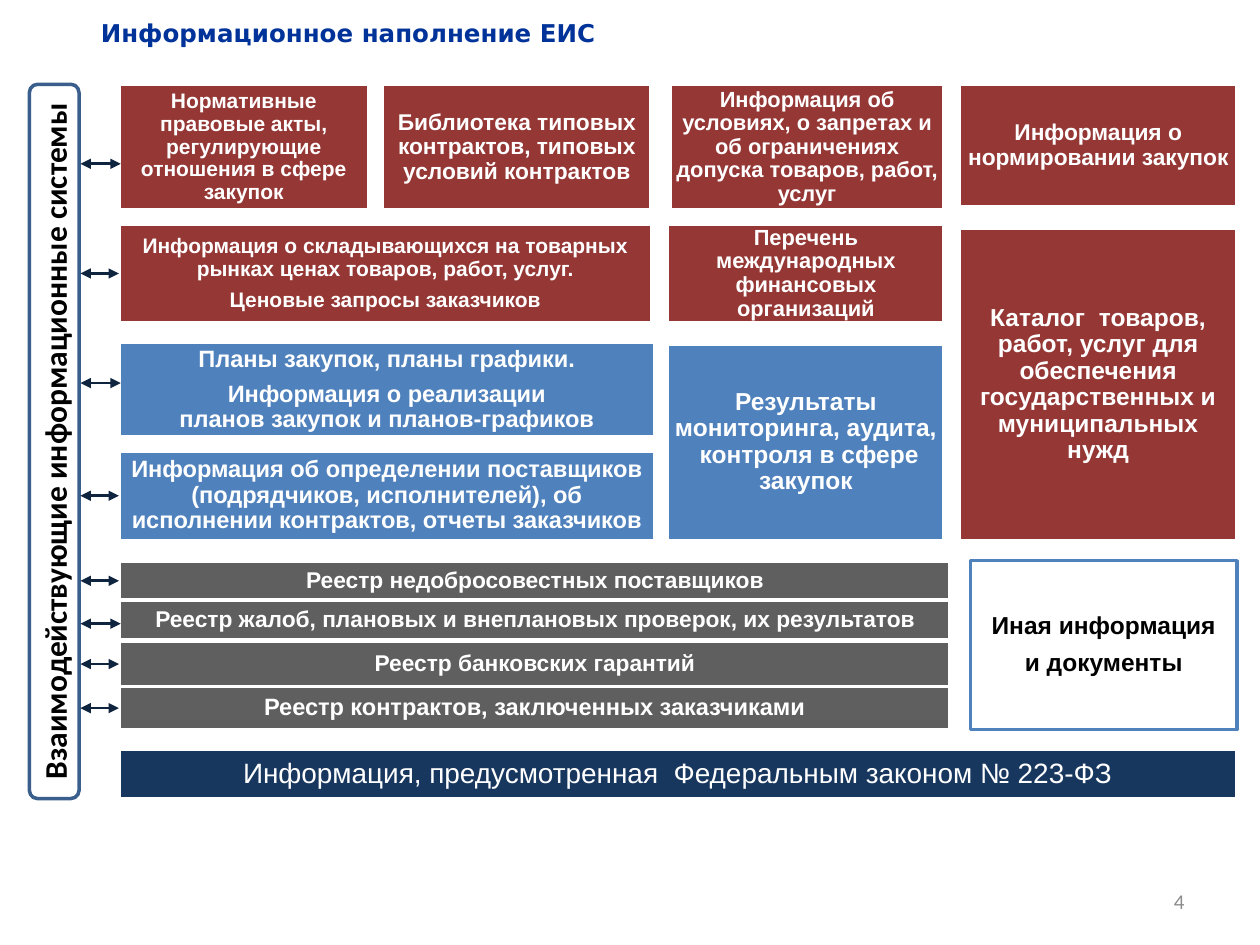
import pptx
import pptx.util
import pptx.dml.color
import pptx.enum.shapes
import pptx.enum.text
import pptx.oxml.ns
from lxml import etree

Pt = pptx.util.Pt
RGB = pptx.dml.color.RGBColor
SHAPE = pptx.enum.shapes.MSO_SHAPE
ALIGN = pptx.enum.text.PP_ALIGN
ANCHOR = pptx.enum.text.MSO_ANCHOR
qn = pptx.oxml.ns.qn

WHITE = RGB(0xFF, 0xFF, 0xFF)
BLACK = RGB(0, 0, 0)
RED = RGB(0x95, 0x37, 0x35)
BLUE = RGB(0x4F, 0x81, 0xBD)
GRAY = RGB(0x5F, 0x5F, 0x5F)
NAVY = RGB(0x17, 0x37, 0x5E)
TITLE_BLUE = RGB(0x00, 0x33, 0x99)
FRAME_BLUE = RGB(0x3A, 0x5F, 0x8C)
ARROW_NAVY = RGB(0x0F, 0x24, 0x3E)
PAGE_GRAY = RGB(0x8C, 0x8C, 0x8C)

# Column edges and widths
LEFT = 68
COL3, COL4, COL_W = 381.4, 548.4, 158.2
PAIR_W, REGISTER_W = 306, 475

# left, top, width, height, fill, size, paragraphs
TOPICS = [
    (LEFT, 48.2, 142.6, 72, RED, 12,
     ["Нормативные правовые акты, регулирующие отношения в сфере закупок"]),
    (218.5, 48.2, 153.5, 72, RED, 13,
     ["Библиотека типовых контрактов, типовых условий контрактов"]),
    (382.8, 48.2, 156.8, 72, RED, 12.5,
     ["Информация об условиях, о запретах и об ограничениях допуска товаров, работ, услуг"]),
    (COL4, 48.2, COL_W, 70, RED, 13, ["Информация о нормировании закупок"]),
    (COL3, 128.2, COL_W, 56.2, RED, 12.5,
     ["Перечень международных финансовых организаций"]),
    (COL4, 130.4, COL_W, 178.5, RED, 14,
     ["Каталог  товаров, работ, услуг для обеспечения государственных и муниципальных нужд"]),
    (COL3, 196.6, COL_W, 112.3, BLUE, 14,
     ["Результаты мониторинга, аудита,  контроля в сфере закупок"]),
]

# The same fields, for blocks that exchange data with the side systems
EXCHANGE = [
    (LEFT, 128.2, 304.4, 56.2, RED, 12,
     ["Информация о складывающихся на товарных рынках ценах товаров, работ, услуг.",
      "Ценовые запросы заказчиков"]),
    (LEFT, 195.8, PAIR_W, 54, BLUE, 13.5,
     ["Планы закупок, планы графики.",
      "Информация о реализации\nпланов закупок и планов-графиков"]),
    (LEFT, 257.8, PAIR_W, 51, BLUE, 13.5,
     ["Информация об определении поставщиков (подрядчиков, исполнителей), "
      "об исполнении контрактов, отчеты заказчиков"]),
    (LEFT, 320.8, REGISTER_W, 22.2, GRAY, 13, ["Реестр недобросовестных поставщиков"]),
    (LEFT, 343, REGISTER_W, 22.5, GRAY, 13,
     ["Реестр жалоб, плановых и внеплановых проверок, их результатов"]),
    (LEFT, 366.5, REGISTER_W, 25.9, GRAY, 13, ["Реестр банковских гарантий"]),
    (LEFT, 392.4, REGISTER_W, 24.5, GRAY, 13.5,
     ["Реестр контрактов, заключенных заказчиками"]),
]
# Arrow height for each exchange block; None means the middle of its side
ARROW_Y = [None, 218.9, None, None, 356.4, None, None]


def add_text(p, text, size, color, bold=False, font="Arial"):
    for i, line in enumerate(text.split("\n")):
        if i:
            p.add_line_break()
        r = p.add_run()
        r.text = line
        r.font.name, r.font.size, r.font.bold = font, Pt(size), bold
        r.font.color.rgb = color


def set_insets(tf, left, top, right, bottom):
    tf.margin_left, tf.margin_top = Pt(left), Pt(top)
    tf.margin_right, tf.margin_bottom = Pt(right), Pt(bottom)


def add_box(s, kind, left, top, width, height, fill, line):
    sp = s.shapes.add_shape(kind, Pt(left), Pt(top), Pt(width), Pt(height))
    sp.shadow.inherit = False
    sp.fill.solid()
    sp.fill.fore_color.rgb = fill
    sp.line.color.rgb = line
    sp.line.width = Pt(2)
    sp.text_frame.word_wrap = True
    sp.text_frame.vertical_anchor = ANCHOR.MIDDLE
    return sp


def add_block(s, left, top, width, height, fill, size, paragraphs,
              line=WHITE, color=WHITE, bold=True):
    sp = add_box(s, SHAPE.RECTANGLE, left, top, width, height, fill, line)
    tf = sp.text_frame
    set_insets(tf, 3.6, 3.6, 3.6, 3.6)
    for i, text in enumerate(paragraphs):
        p = tf.add_paragraph() if i else tf.paragraphs[0]
        p.alignment = ALIGN.CENTER
        p.line_spacing = 0.9
        if i:
            p.space_before = Pt(round(0.4 * size, 1))
        add_text(p, text, size, color, bold)
    return sp


def add_label(s, left, top, width, height, text, size, color, font, bold=False):
    sp = s.shapes.add_textbox(Pt(left), Pt(top), Pt(width), Pt(height))
    tf = sp.text_frame
    tf.word_wrap = True
    add_text(tf.paragraphs[0], text, size, color, bold, font)
    return tf


def add_arrow(s, y, block=None):
    c = s.shapes.add_connector(pptx.enum.shapes.MSO_CONNECTOR.STRAIGHT,
                               Pt(46), Pt(y), Pt(69), Pt(y))
    if block is not None:
        c.end_connect(block, 1)
    c.line.color.rgb = ARROW_NAVY
    c.line.width = Pt(1.5)
    ln = c.line._get_or_add_ln()
    for end in ("a:headEnd", "a:tailEnd"):
        etree.SubElement(ln, qn(end)).set("type", "triangle")
    etree.SubElement(c._element.spPr, qn("a:effectLst"))


def add_side_systems(s):
    sp = add_box(s, SHAPE.ROUNDED_RECTANGLE, 16.8, 48.2, 28.4, 408.2, WHITE, FRAME_BLUE)
    tf = sp.text_frame
    tf._txBody.bodyPr.set("vert", "vert270")
    p = tf.paragraphs[0]
    p.alignment = ALIGN.CENTER
    add_text(p, "Взаимодействующие информационные системы", 18, BLACK, True, "Calibri")


def main():
    prs = pptx.Presentation()
    prs.slide_width, prs.slide_height = Pt(720), Pt(540)
    s = prs.slides.add_slide(prs.slide_layouts[6])

    # Title
    tf = add_label(s, 44.6, 1.4, 654, 32, "Информационное наполнение ЕИС",
                   14, TITLE_BLUE, "DejaVu Sans", True)
    set_insets(tf, 13, 8.7, 7.2, 3.6)

    # Information blocks
    for topic in TOPICS:
        add_block(s, *topic)
    exchange = [add_block(s, *row) for row in EXCHANGE]
    add_block(s, 554.6, 320.4, 152.2, 96.5, WHITE, 14,
              ["Иная информация", "и документы"], line=BLUE, color=BLACK)
    add_block(s, LEFT, 428.4, 638.6, 28, NAVY, 16,
              ["Информация, предусмотренная  Федеральным законом № 223-ФЗ"], bold=False)

    # Side systems and exchange arrows
    add_side_systems(s)
    add_arrow(s, 93.6)
    for block, y in zip(exchange, ARROW_Y):
        if y is None:
            add_arrow(s, (block.top + block.height / 2) / Pt(1), block)
        else:
            add_arrow(s, y)

    # Page number
    tf = add_label(s, 516, 500.5, 168, 28.8, "4", 12, PAGE_GRAY, "Calibri")
    tf.vertical_anchor = ANCHOR.MIDDLE
    tf.paragraphs[0].alignment = ALIGN.RIGHT

    prs.save("out.pptx")


if __name__ == "__main__":
    main()
